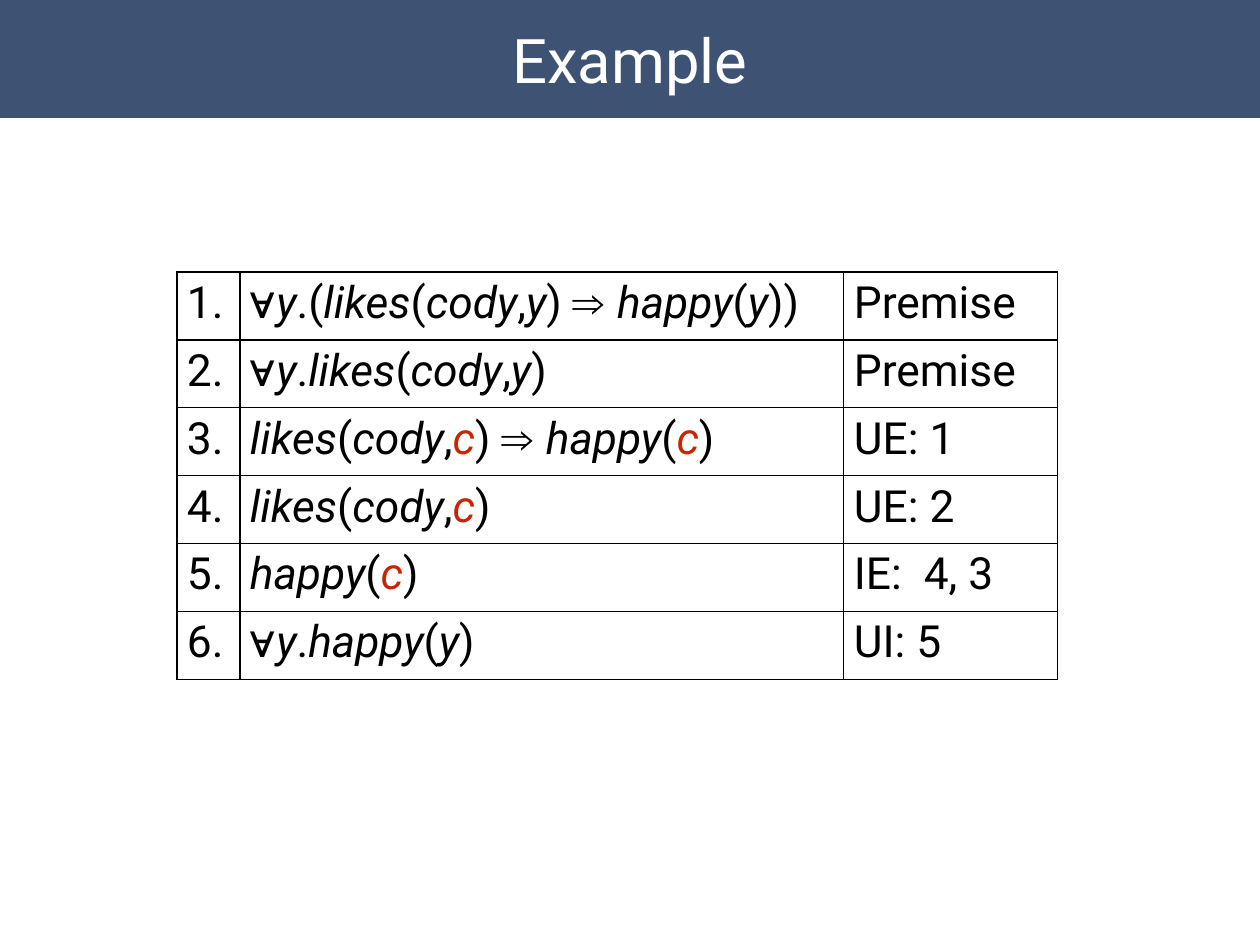
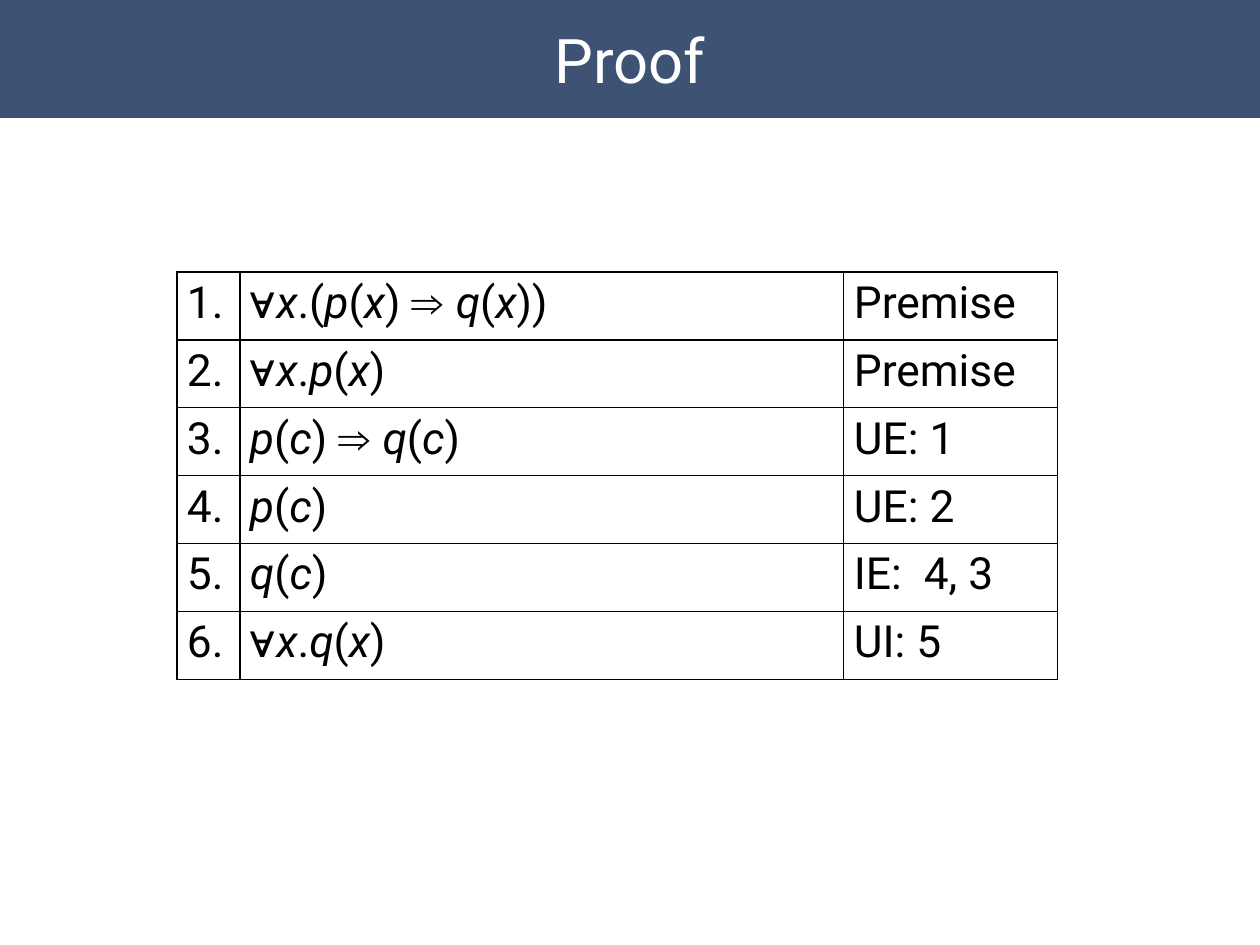
from itertools import accumulate, groupby

from lxml import etree
from pptx import Presentation
from pptx import util as u
from pptx.dml.color import RGBColor
from pptx.enum import shapes, text
from pptx.oxml import ns

PX = 10320
SLIDE_W, SLIDE_H = 1260, 945
BAND_BOX = (0, 0, SLIDE_W, 118)
PROOF_BOX = (177, 272, 881, 408)
STEP_COL, REASON_COL = 63, 214
INSET = 5
COLORS = {"band": "3E5273", "title": "FFFFFF", "ink": "000000", "accent": "C82506"}
BODY_FONT, SYMBOL_FONT = "Roboto", "Arial"
SYMBOLS = "∀⇒"
REASONS = ["Premise", "Premise", "UE: 1", "UE: 2", "IE:  4, 3", "UI: 5"]
PROOFS = [
    ("Example", "c", [
        "∀y.(likes(cody,y) ⇒ happy(y))",
        "∀y.likes(cody,y)",
        "likes(cody,c) ⇒ happy(c)",
        "likes(cody,c)",
        "happy(c)",
        "∀y.happy(y)",
    ]),
    ("Proof", None, [
        "∀x.(p(x) ⇒ q(x))",
        "∀x.p(x)",
        "p(c) ⇒ q(c)",
        "p(c)",
        "q(c)",
        "∀x.q(x)",
    ]),
]


def px(length):
    return u.Emu(length * PX)


def color(name):
    return RGBColor.from_string(COLORS[name])


def set_font(font, size, ink):
    font.name = BODY_FONT
    font.size = u.Pt(size)
    font.color.rgb = color(ink)


def set_insets(holder):
    for side in ("left", "top", "right", "bottom"):
        setattr(holder, f"margin_{side}", px(INSET))


def add_title_band(slide, box, title):
    band = slide.shapes.add_shape(shapes.MSO_SHAPE.RECTANGLE, *map(px, box))
    band.shadow.inherit = False
    band.fill.solid()
    band.fill.fore_color.rgb = color("band")
    band.line.fill.background()
    frame = band.text_frame
    frame.word_wrap = True
    frame.vertical_anchor = text.MSO_ANCHOR.MIDDLE
    set_insets(frame)
    heading = frame.paragraphs[0]
    heading.text = title
    heading.alignment = text.PP_ALIGN.CENTER
    set_font(heading.font, 50, "title")


def char_kind(char):
    if char == " ":
        return ""
    if char in SYMBOLS:
        return "symbol"
    return "name" if char.isalpha() else "punctuation"


def split_formula(formula):
    kinds = accumulate(map(char_kind, formula), lambda last, kind: kind or last)
    for kind, pairs in groupby(zip(kinds, formula), key=lambda pair: pair[0]):
        yield kind, "".join(char for _, char in pairs)


def write_formula(line, formula, constant):
    for kind, part in split_formula(formula):
        run = line.add_run()
        run.text = part
        if kind == "symbol":
            run.font.name = SYMBOL_FONT
        elif kind == "name":
            run.font.italic = True
            if part == constant:
                run.font.color.rgb = color("accent")


def style_cell(cell):
    set_insets(cell)
    cell_props = cell._tc.get_or_add_tcPr()
    for side in "LRTB":
        border = etree.SubElement(cell_props, ns.qn(f"a:ln{side}"), w=str(u.Pt(1)))
        fill = etree.SubElement(border, ns.qn("a:solidFill"))
        etree.SubElement(fill, ns.qn("a:srgbClr"), val=COLORS["ink"])
    cell.fill.background()
    line = cell.text_frame.paragraphs[0]
    line.space_before = u.Pt(9)
    line._p.get_or_add_pPr().set("marL", str(px(INSET)))
    set_font(line.font, 36, "ink")
    return line


def add_proof(slide, box, formulas, constant):
    proof = slide.shapes.add_table(len(formulas), 3, *map(px, box)).table
    proof.first_row = proof.horz_banding = False
    widths = (STEP_COL, box[2] - STEP_COL - REASON_COL, REASON_COL)
    for column, width in zip(proof.columns, widths):
        column.width = px(width)
    for step, (formula, reason) in enumerate(zip(formulas, REASONS)):
        proof.rows[step].height = px(box[3] // len(formulas))
        number, claim, rule = (style_cell(proof.cell(step, col)) for col in range(3))
        number.text = f"{step + 1}."
        write_formula(claim, formula, constant)
        rule.text = reason


def main():
    deck = Presentation()
    deck.slide_width, deck.slide_height = px(SLIDE_W), px(SLIDE_H)
    for title, constant, formulas in PROOFS:
        slide = deck.slides.add_slide(deck.slide_layouts[6])
        add_title_band(slide, BAND_BOX, title)
        add_proof(slide, PROOF_BOX, formulas, constant)
    deck.save("out.pptx")


if __name__ == "__main__":
    main()
